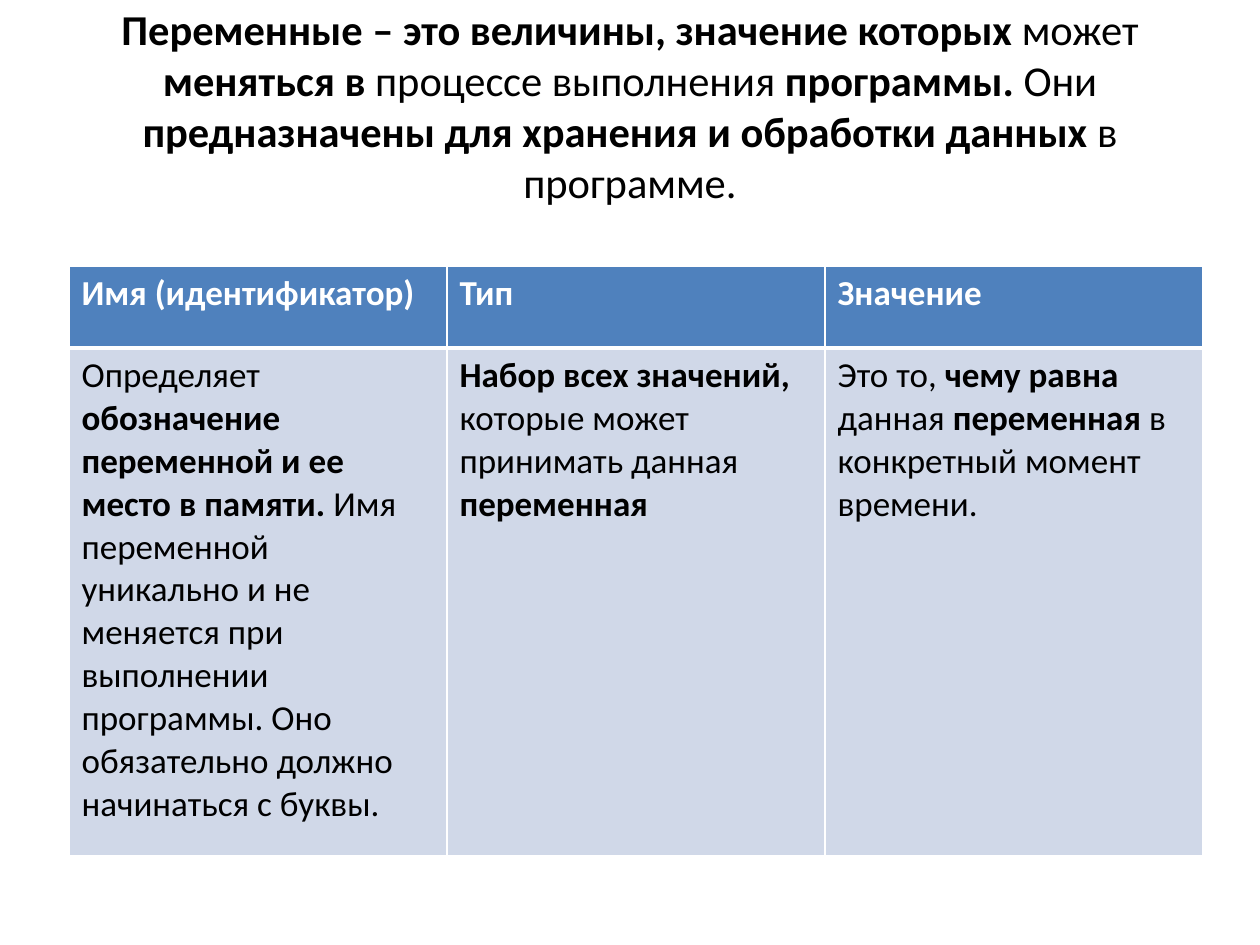
from lxml.etree import SubElement
from pptx import Presentation
from pptx.dml.color import RGBColor
from pptx.enum.text import MSO_ANCHOR, MSO_AUTO_SIZE, PP_ALIGN
from pptx.oxml.ns import qn
from pptx.util import Pt

SCALE = 914400 / 126
COLORS = {"head": "4F81BD", "body": "D0D8E8", "line": "FFFFFF",
          "light": "FFFFFF", "dark": "000000"}

TITLE = [("Переменные – это величины, значение которых ", True),
         ("может ", False), ("меняться в ", True),
         ("процессе выполнения ", False), ("программы. ", True),
         ("Они", False),
         (" предназначены для хранения и обработки данных ", True),
         ("в программе.", False)]

HEADS = [[("Имя (идентификатор)", True)], [("Тип", True)],
         [("Значение", True)]]
CELLS = [
    [("Определяет ", False),
     ("обозначение переменной и ее место в памяти. ", True),
     ("Имя переменной уникально и не меняется при выполнении программы. "
      "Оно обязательно должно начинаться с буквы.", False)],
    [("Набор всех значений, ", True),
     ("которые может принимать данная", False), (" переменная", True)],
    [("Это то, ", False), ("чему равна ", True), ("данная ", False),
     ("переменная", True), (" в конкретный момент времени.", False)],
]


def px(n):
    return round(n * SCALE)


def write(frame, runs, size, color):
    para = frame.paragraphs[0]
    for text, bold in runs:
        run = para.add_run()
        run.text = text
        form = {"name": "Calibri", "size": Pt(size), "bold": bold}
        for key, value in form.items():
            setattr(run.font, key, value)
        run.font.color.rgb = RGBColor.from_string(COLORS[color])
    return para


def edge(cell, widths):
    props = cell._tc.get_or_add_tcPr()
    for side, width in zip("LRTB", widths):
        line = SubElement(props, qn(f"a:ln{side}"), w=str(Pt(width)))
        fill = SubElement(line, qn("a:solidFill"))
        SubElement(fill, qn("a:srgbClr"), val=COLORS["line"])


def add_title(slide, left, top, width, height):
    title = slide.shapes.title
    box = {"left": left, "top": top, "width": width, "height": height}
    for key, value in box.items():
        setattr(title, key, px(value))
    frame = title.text_frame
    form = {"word_wrap": True, "auto_size": MSO_AUTO_SIZE.NONE,
            "vertical_anchor": MSO_ANCHOR.MIDDLE, "margin_bottom": px(52)}
    for key, value in form.items():
        setattr(frame, key, value)
    write(frame, TITLE, 24.3, "dark").alignment = PP_ALIGN.CENTER


def add_grid(slide, left, top, width, heights):
    rows = [(HEADS, "head", "light", (1, 1, 1, 3)),
            (CELLS, "body", "dark", (1, 1, 3, 1))]
    box = [px(n) for n in (left, top, width, sum(heights))]
    table = slide.shapes.add_table(len(rows), len(HEADS), *box).table
    for col in table.columns:
        col.width = px(width / len(HEADS))
    for i, (texts, fill, ink, widths) in enumerate(rows):
        table.rows[i].height = px(heights[i])
        for j, runs in enumerate(texts):
            cell = table.cell(i, j)
            edge(cell, widths)
            cell.fill.solid()
            cell.fill.fore_color.rgb = RGBColor.from_string(COLORS[fill])
            write(cell.text_frame, runs, 20, ink)


def main():
    deck = Presentation()
    deck.slide_width, deck.slide_height = px(1260), px(945)
    slide = deck.slides.add_slide(deck.slide_layouts[5])
    add_title(slide, 63, 38, 1134, 179)
    add_grid(slide, 69, 266, 1134, (82, 508))
    deck.save("out.pptx")


if __name__ == "__main__":
    main()
